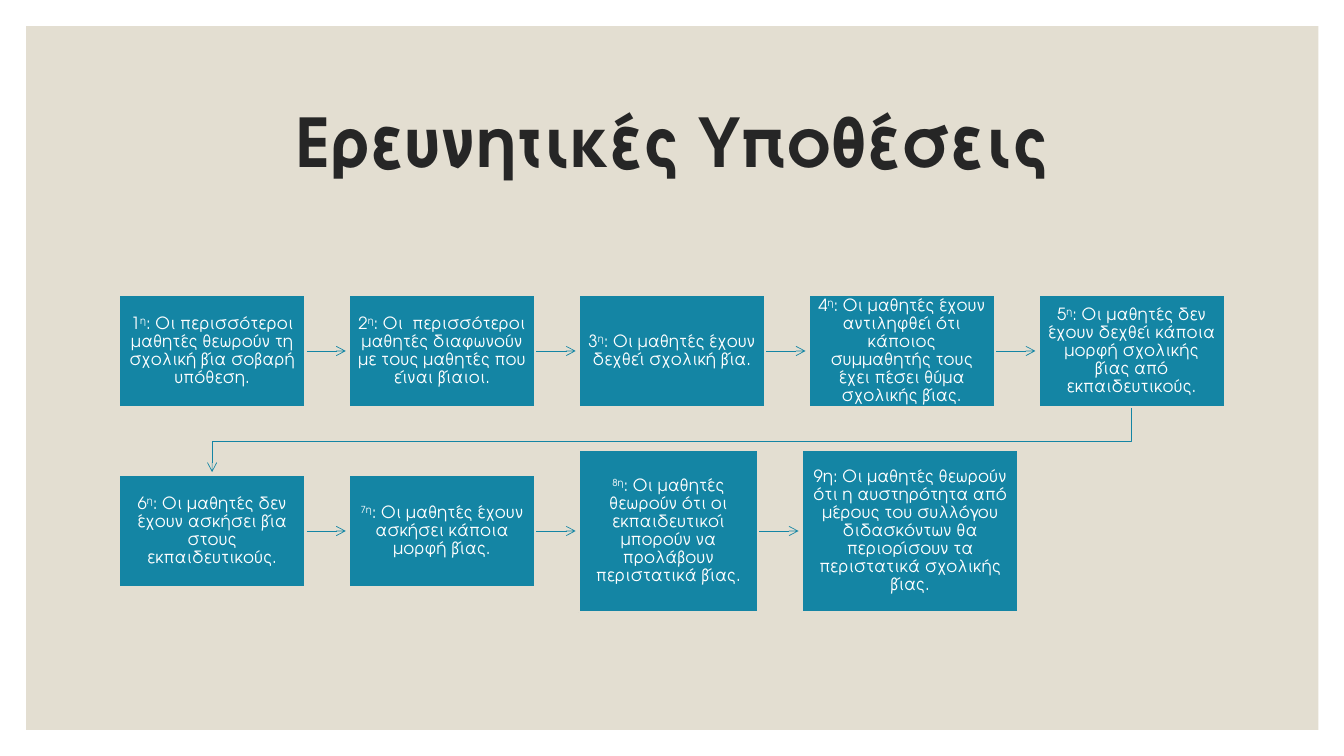
"""Build the research hypotheses slide: nine boxes linked by arrows in two rows."""
import pptx
import pptx.util
import pptx.dml.color
import pptx.enum.shapes
import pptx.enum.text
import pptx.oxml
import pptx.oxml.ns

Pt = pptx.util.Pt
RGB = pptx.dml.color.RGBColor.from_string

TITLE = "Ερευνητικές Υποθέσεις"
# fmt: off
ROWS = [
    {"mid": 250.7, "boxes": [
        (133, 79.8, "1", "η", ": Οι περισσότεροι μαθητές θεωρούν τη σχολική βία σοβαρή υπόθεση."),
        (133, 79.8, "2", "η", ": Οι  περισσότεροι μαθητές διαφωνούν με τους μαθητές που είναι βίαιοι."),
        (133, 79.8, "3", "η", ": Οι μαθητές έχουν δεχθεί σχολική βία."),
        (133, 79.8, "4", "η", ": Οι μαθητές έχουν αντιληφθεί ότι κάποιος συμμαθητής τους έχει πέσει θύμα "
                              "σχολικής βίας."),
        (133, 79.8, "5", "η", ": Οι μαθητές δεν έχουν δεχθεί κάποια μορφή σχολικής βίας από εκπαιδευτικούς."),
    ]},
    {"mid": 379.3, "boxes": [
        (133, 79.8, "6", "η", ": Οι μαθητές δεν έχουν ασκήσει βία στους εκπαιδευτικούς."),
        (133, 79.8, "", "7η", ": Οι μαθητές έχουν ασκήσει κάποια μορφή βίας."),
        (128, 115.8, "", "8η", ": Οι μαθητές θεωρούν ότι οι εκπαιδευτικοί μπορούν να προλάβουν "
                               "περιστατικά βίας."),
        (155, 115.8, "9η: Οι μαθητές θεωρούν ότι η αυστηρότητα από μέρους του συλλόγου "
                     "διδασκόντων θα περιορίσουν τα περιστατικά σχολικής βίας.", "", ""),
    ]},
]
# fmt: on

THEME = {
    "font": "TeX Gyre Adventor", "title_size": 48, "body_size": 12,
    "panel": "E3DED1", "box": "1485A4", "title": "262626", "body": "FFFFFF",
}
LEFT, GAP, ARROW_START, ARROW_END = 85, 31.2, 1, 29


def write(shape, runs, size, color, bold=False, inset=(7.2, 3.6)):
    """Fill a shape with one centred paragraph of (text, superscript) runs."""
    tf = shape.text_frame
    tf.word_wrap = True
    tf.vertical_anchor = pptx.enum.text.MSO_ANCHOR.MIDDLE
    tf.margin_left = tf.margin_right = Pt(inset[0])
    tf.margin_top = tf.margin_bottom = Pt(inset[1])
    p = tf.paragraphs[0]
    p.alignment = pptx.enum.text.PP_ALIGN.CENTER
    p.line_spacing = 0.9
    for text, raised in runs:
        if not text:
            continue
        r = p.add_run()
        r.text = text
        r.font.name = THEME["font"]
        r.font.size = Pt(size)
        r.font.bold = bold
        r.font.color.rgb = RGB(color)
        if raised:
            r.font._element.set("baseline", "30000")


def add_rect(s, x, y, w, h, fill, line=None):
    """Add a flat rectangle with an optional outline."""
    sp = s.shapes.add_shape(pptx.enum.shapes.MSO_SHAPE.RECTANGLE, Pt(x), Pt(y), Pt(w), Pt(h))
    sp.shadow.inherit = False
    sp.fill.solid()
    sp.fill.fore_color.rgb = RGB(fill)
    if line:
        sp.line.color.rgb = RGB(line)
        sp.line.width = Pt(1.5)
    else:
        sp.line.fill.background()
    return sp


def style_arrow(sp):
    """Give a line its colour, width and open arrowhead."""
    sp.line.color.rgb = RGB(THEME["box"])
    sp.line.width = Pt(0.5)
    ln = sp.line._get_or_add_ln()
    ln.append(pptx.oxml.parse_xml(f'<a:tailEnd {pptx.oxml.ns.nsdecls("a")} type="arrow"/>'))


def add_arrow(s, x1, x2, y):
    """Add a horizontal arrow."""
    cn = s.shapes.add_connector(pptx.enum.shapes.MSO_CONNECTOR.STRAIGHT, Pt(x1), Pt(y), Pt(x2), Pt(y))
    style_arrow(cn)
    cn._element.spPr.append(pptx.oxml.parse_xml(f'<a:effectLst {pptx.oxml.ns.nsdecls("a")}/>'))


def add_bent_arrow(s, points):
    """Add an open arrow through several points."""
    start, *rest = [(Pt(x), Pt(y)) for x, y in points]
    fb = s.shapes.build_freeform(*start)
    fb.add_line_segments(rest, close=False)
    sp = fb.convert_to_shape()
    sp.shadow.inherit = False
    sp.fill.background()
    style_arrow(sp)


def add_row(s, mid, boxes):
    """Lay out one row of boxes with arrows in the gaps."""
    x = LEFT
    for i, (w, h, lead, ordinal, rest) in enumerate(boxes):
        if i:
            add_arrow(s, x - GAP + ARROW_START, x - GAP + ARROW_END, mid)
        sp = add_rect(s, x, mid - h / 2, w, h, THEME["box"], THEME["panel"])
        write(sp, [(lead, False), (ordinal, True), (rest, False)],
              THEME["body_size"], THEME["body"], inset=(6.5, 7))
        x += w + GAP


def main():
    prs = pptx.Presentation()
    prs.slide_width, prs.slide_height = Pt(960), Pt(540)
    s = prs.slides.add_slide(prs.slide_layouts[6])
    add_rect(s, 18.7, 18.7, 923, 502.6, THEME["panel"])
    title = s.shapes.add_textbox(Pt(84), Pt(50.4), Pt(792), Pt(108))
    write(title, [(TITLE, False)], THEME["title_size"], THEME["title"], bold=True)

    upper, lower = ROWS
    w, h = upper["boxes"][0][:2]
    first = LEFT + w / 2
    last = first + (len(upper["boxes"]) - 1) * (w + GAP)
    start, end = upper["mid"] + h / 2 + 1, lower["mid"] - h / 2 - 2.2
    turn = (upper["mid"] + lower["mid"]) / 2
    add_bent_arrow(s, [(last, start), (last, turn), (first, turn), (first, end)])
    for row in ROWS:
        add_row(s, **row)
    prs.save("out.pptx")


if __name__ == "__main__":
    main()
